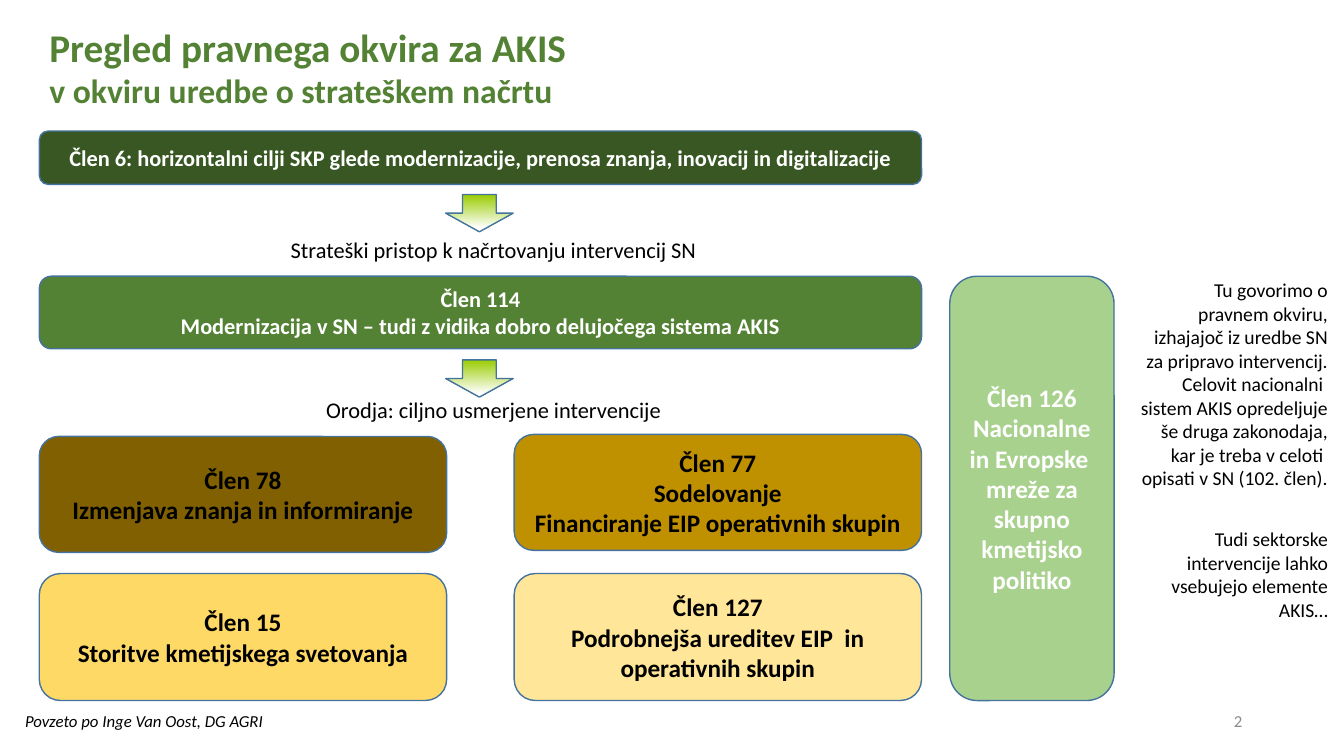
from dataclasses import dataclass

from pptx import Presentation
from pptx import util as u
from pptx.dml.color import RGBColor
from pptx.enum import shapes, text

PX = 9144  # EMU per px, 100 px to the inch


@dataclass(frozen=True)
class Theme:
    font: str = "Calibri"
    black: str = "000000"
    white: str = "FFFFFF"
    grey: str = "8C8C8C"
    outline: str = "43739E"
    heading: str = "548235"
    goals: str = "385723"
    plan: str = "548235"
    network: str = "A9D18E"
    exchange: str = "806000"
    cooperation: str = "BF9000"
    advice: str = "FFD966"
    groups: str = "FFE699"
    arrow: str = "99CC00"
    title_size: int = 28
    subtitle_size: int = 24
    card_size: int = 18
    body_size: int = 16
    note_size: int = 14
    small_size: int = 12


THEME = Theme()
ALIGN = text.PP_ALIGN
ANCHOR = text.MSO_ANCHOR


def emu(box):
    return [u.Emu(length * PX) for length in box]


def write(frame, lines, sizes, color, align, anchor, bold=False, italic=False):
    frame.word_wrap = True
    frame.vertical_anchor = anchor
    for index, (line, size) in enumerate(zip(lines, sizes)):
        paragraph = frame.paragraphs[0] if index == 0 else frame.add_paragraph()
        paragraph.text = line
        paragraph.alignment = align
        font = paragraph.font
        font.name, font.size = THEME.font, u.Pt(size)
        font.bold, font.italic = bold, italic
        font.color.rgb = RGBColor.from_string(color)


def add_outlined(slide, kind, box):
    shape = slide.shapes.add_shape(kind, *emu(box))
    shape.shadow.inherit = False
    shape.line.color.rgb = RGBColor.from_string(THEME.outline)
    shape.line.width = u.Pt(1)
    return shape


def add_card(slide, box, lines, fill, color, size):
    card = add_outlined(slide, shapes.MSO_SHAPE.ROUNDED_RECTANGLE, box)
    card.fill.solid()
    card.fill.fore_color.rgb = RGBColor.from_string(fill)
    write(card.text_frame, lines, [size] * len(lines), color,
          ALIGN.CENTER, ANCHOR.MIDDLE, bold=True)


def add_arrow(slide, box):
    arrow = add_outlined(slide, shapes.MSO_SHAPE.DOWN_ARROW, box)
    arrow.fill.gradient()
    arrow.fill.gradient_angle = 270
    stops = zip(arrow.fill.gradient_stops, (0, 0.9), (THEME.arrow, THEME.white))
    for stop, position, color in stops:
        stop.position = position
        stop.color.rgb = RGBColor.from_string(color)


def add_label(slide, box, line, size, align, color=THEME.black,
              anchor=ANCHOR.TOP, italic=False):
    label = slide.shapes.add_textbox(*emu(box))
    write(label.text_frame, [line], [size], color, align, anchor, italic=italic)


def add_title(slide, box):
    title = slide.shapes.title
    title.left, title.top, title.width, title.height = emu(box)
    title.text_frame.auto_size = text.MSO_AUTO_SIZE.NONE
    write(title.text_frame,
          ["Pregled pravnega okvira za AKIS", "v okviru uredbe o strateškem načrtu"],
          [THEME.title_size, THEME.subtitle_size], THEME.heading,
          ALIGN.LEFT, ANCHOR.MIDDLE, bold=True)


def add_strategy(slide, box):
    """Two banners, each followed by an arrow and its caption."""
    left, top, width, _ = box
    steps = [
        (0, 53, 63, 99, THEME.goals,
         ["Člen 6: horizontalni cilji SKP glede modernizacije, prenosa znanja, "
          "inovacij in digitalizacije"],
         "Strateški pristop k načrtovanju intervencij SN"),
        (144, 72, 227, 258, THEME.plan,
         ["Člen 114", "Modernizacija v SN – tudi z vidika dobro delujočega sistema AKIS"],
         "Orodja: ciljno usmerjene intervencije"),
    ]
    for banner_y, height, arrow_y, caption_y, fill, lines, caption in steps:
        add_card(slide, (left, top + banner_y, width, height), lines, fill,
                 THEME.white, THEME.body_size)
        add_arrow(slide, (left + 403, top + arrow_y, 67, 37))
        add_label(slide, (left + 168, top + caption_y, 565, 37), caption,
                  THEME.body_size, ALIGN.CENTER)


def add_tools(slide, box):
    """Intervention cards in two columns and two rows."""
    left, top, width, height = box
    column_gap, lower_height, upper_height = 67, 126, 115
    card_width = (width - column_gap) // 2
    right = left + card_width + column_gap
    lower = top + height - lower_height
    cards = [
        (left, top + 2, upper_height, THEME.exchange,
         ["Člen 78", "Izmenjava znanja in informiranje"]),
        (right, top, upper_height, THEME.cooperation,
         ["Člen 77", "Sodelovanje", "Financiranje EIP operativnih skupin"]),
        (left, lower, lower_height, THEME.advice,
         ["Člen 15", "Storitve kmetijskega svetovanja"]),
        (right, lower, lower_height, THEME.groups,
         ["Člen 127", "Podrobnejša ureditev EIP  in operativnih skupin"]),
    ]
    for x, y, card_height, fill, lines in cards:
        add_card(slide, (x, y, card_width, card_height), lines, fill,
                 THEME.black, THEME.card_size)


def add_network(slide, box):
    add_card(slide, box,
             ["Člen 126", "Nacionalne in Evropske  mreže za skupno kmetijsko politiko"],
             THEME.network, THEME.white, THEME.card_size)


def add_remarks(slide, box):
    left, top, width, _ = box
    add_label(slide, (left + 6, top, width - 6, 222),
              "Tu govorimo o pravnem okviru, izhajajoč iz uredbe SN za pripravo "
              "intervencij. Celovit nacionalni  sistem AKIS opredeljuje še druga "
              "zakonodaja, kar je treba v celoti  opisati v SN (102. člen).",
              THEME.note_size, ALIGN.RIGHT)
    add_label(slide, (left, top + 247, width, 104),
              "Tudi sektorske intervencije lahko vsebujejo elemente AKIS…",
              THEME.note_size, ALIGN.RIGHT)


def add_footer(slide, box):
    left, top, width, _ = box
    add_label(slide, (left, top + 5, 275, 30), "Povzeto po Inge Van Oost, DG AGRI",
              THEME.small_size, ALIGN.LEFT, italic=True)
    add_label(slide, (left + width - 300, top, 300, 40), "2", THEME.small_size,
              ALIGN.RIGHT, color=THEME.grey, anchor=ANCHOR.MIDDLE)


def main():
    deck = Presentation()
    deck.slide_width, deck.slide_height = emu((1333, 750))
    slide = deck.slides.add_slide(deck.slide_layouts[5])
    add_title(slide, (39, 44, 981, 44))
    add_strategy(slide, (39, 130, 875, 295))
    add_tools(slide, (39, 431, 875, 264))
    add_network(slide, (942, 274, 163, 421))
    add_remarks(slide, (1115, 271, 212, 351))
    add_footer(slide, (15, 695, 1227, 40))
    deck.save("out.pptx")


if __name__ == "__main__":
    main()
